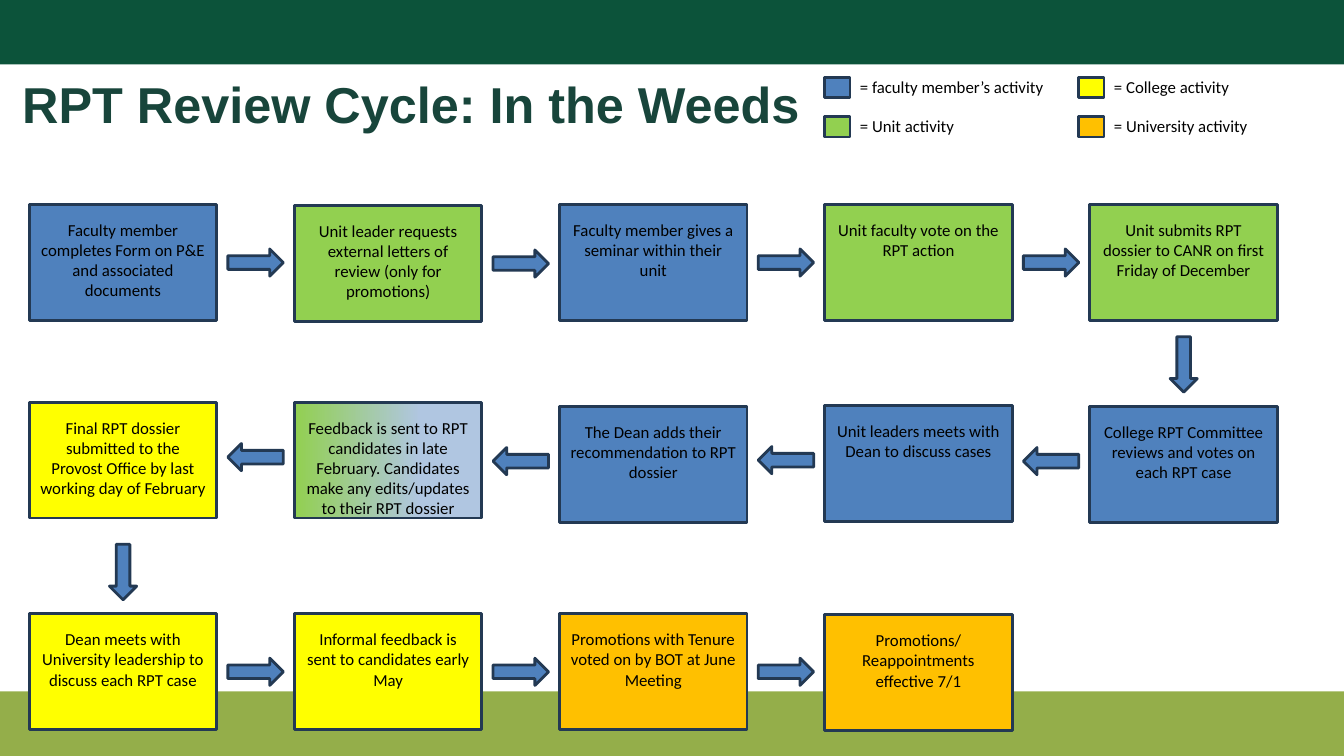
"""Build the RPT review cycle slide as a serpentine flow of steps."""
from dataclasses import dataclass

from pptx import Presentation
from pptx.dml.color import RGBColor
from pptx.enum.shapes import MSO_SHAPE
from pptx.enum.text import MSO_ANCHOR, MSO_AUTO_SIZE, PP_ALIGN
from pptx.util import Inches, Pt

RECTANGLE, ARROW = MSO_SHAPE.RECTANGLE, MSO_SHAPE.RIGHT_ARROW
LEFT, CENTER, TOP = PP_ALIGN.LEFT, PP_ALIGN.CENTER, MSO_ANCHOR.TOP
FIXED, GROW = MSO_AUTO_SIZE.NONE, MSO_AUTO_SIZE.SHAPE_TO_FIT_TEXT


@dataclass(frozen=True)
class Theme:
    header: str = "0C533A"
    footer: str = "94AE4A"
    title: str = "18453B"
    text: str = "000000"
    outline: str = "233953"
    faculty: str = "4F81BD"
    unit: str = "92D050"
    college: str = "FFFF00"
    university: str = "FFC000"
    faculty_tint: str = "B0C6E1"
    title_font: str = "Arial"
    body_font: str = "Calibri"
    title_size: int = 36
    body_size: int = 12
    outline_width: int = 2


THEME = Theme()
SHARED = (THEME.unit, THEME.faculty_tint)
SLIDE_WIDTH, SLIDE_HEIGHT = 13.33, 7.5
BAND_HEIGHT = 0.64
GRID_LEFT, COLUMN_STEP = 0.29, 2.63
BOX_WIDTH, BOX_HEIGHT, TEXT_DROP = 1.86, 1.15, 0.1
ARROW_WIDTH, ARROW_HEIGHT, ARROW_GAP = 0.55, 0.27, 0.11

LEGEND = [
    (8.18, 0.77, THEME.faculty, "= faculty member’s activity"),
    (8.18, 1.16, THEME.unit, "= Unit activity"),
    (10.7, 0.77, THEME.college, "= College activity"),
    (10.7, 1.16, THEME.university, "= University activity"),
]

ROWS = [
    (0, 0.44, [
        (2.03, THEME.faculty, "Faculty member completes Form on P&E and associated documents"),
        (2.04, THEME.unit, "Unit leader requests external letters of review (only for promotions)"),
        (2.03, THEME.faculty, "Faculty member gives a seminar within their unit"),
        (2.03, THEME.unit, "Unit faculty vote on the RPT action"),
        (2.03, THEME.unit, "Unit submits RPT dossier to CANR on first Friday of December"),
    ]),
    (180, 0.41, [
        (4.03, THEME.faculty, "College RPT Committee reviews and votes on each RPT case"),
        (4.02, THEME.faculty, "Unit leaders meets with Dean to discuss cases"),
        (4.03, THEME.faculty, "The Dean adds their recommendation to RPT dossier"),
        (3.99, SHARED, "Feedback is sent to RPT candidates in late February. "
                       "Candidates make any edits/updates to their RPT dossier"),
        (3.99, THEME.college, "Final RPT dossier submitted to the Provost Office "
                              "by last working day of February"),
    ]),
    (0, 0.44, [
        (6.09, THEME.college, "Dean meets with University leadership to discuss each RPT case"),
        (6.09, THEME.college, "Informal feedback is sent to candidates early May"),
        (6.09, THEME.university, "Promotions with Tenure voted on by BOT at June Meeting"),
        (6.1, THEME.university, "Promotions/Reappointments effective 7/1"),
    ]),
]
TURNS = [(4, 3.48), (0, 5.54)]


def column_left(column):
    return GRID_LEFT + column * COLUMN_STEP


class SlideBuilder:
    def __init__(self, presentation, theme):
        self.theme = theme
        self.slide = presentation.slides.add_slide(presentation.slide_layouts[5])

    def fill_text(self, frame, text, font, size, color, alignment, bold=False):
        frame.word_wrap = True
        frame.vertical_anchor = TOP
        paragraph = frame.paragraphs[0]
        paragraph.alignment = alignment
        run = paragraph.add_run()
        run.text = text
        run.font.name, run.font.size, run.font.bold = font, Pt(size), bold
        run.font.color.rgb = RGBColor.from_string(color)

    def title(self, text, left, top, width, height):
        title = self.slide.shapes.title
        title.left, title.top = Inches(left), Inches(top)
        title.width, title.height = Inches(width), Inches(height)
        title.text_frame.auto_size = FIXED
        self.fill_text(title.text_frame, text, self.theme.title_font,
                       self.theme.title_size, self.theme.title, LEFT, bold=True)

    def shape(self, kind, left, top, width, height, fill, outlined=True):
        shape = self.slide.shapes.add_shape(
            kind, Inches(left), Inches(top), Inches(width), Inches(height))
        shape.shadow.inherit = False
        if isinstance(fill, tuple):
            shape.fill.gradient()
            shape.fill.gradient_angle = 0
            for stop, color, position in zip(shape.fill.gradient_stops, fill, (0, 0.67)):
                stop.color.rgb = RGBColor.from_string(color)
                stop.position = position
        else:
            shape.fill.solid()
            shape.fill.fore_color.rgb = RGBColor.from_string(fill)
        if outlined:
            shape.line.color.rgb = RGBColor.from_string(self.theme.outline)
            shape.line.width = Pt(self.theme.outline_width)
        else:
            shape.line.fill.background()
        return shape

    def band(self, top, color):
        self.shape(RECTANGLE, 0, top, SLIDE_WIDTH, BAND_HEIGHT, color, outlined=False)

    def label(self, text, left, top, width, height, alignment=LEFT):
        box = self.slide.shapes.add_textbox(
            Inches(left), Inches(top), Inches(width), Inches(height))
        box.text_frame.auto_size = GROW
        self.fill_text(box.text_frame, text, self.theme.body_font,
                       self.theme.body_size, self.theme.text, alignment)

    def step(self, column, top, fill, text):
        left = column_left(column)
        self.shape(RECTANGLE, left, top, BOX_WIDTH, BOX_HEIGHT, fill)
        self.label(text, left, top + TEXT_DROP, BOX_WIDTH, 1.01, CENTER)

    def arrow(self, left, top, rotation):
        arrow = self.shape(ARROW, left, top, ARROW_WIDTH, ARROW_HEIGHT, self.theme.faculty)
        arrow.rotation = rotation

    def row(self, rotation, arrow_drop, steps):
        for index, (top, fill, text) in enumerate(steps):
            column = len(steps) - 1 - index if rotation else index
            self.step(column, top, fill, text)
            if index < len(steps) - 1:
                gap_column = column - 1 if rotation else column
                left = column_left(gap_column) + BOX_WIDTH + ARROW_GAP
                self.arrow(left, top + arrow_drop, rotation)

    def turn(self, column, top):
        self.arrow(column_left(column) + (BOX_WIDTH - ARROW_WIDTH) / 2, top, 90)

    def legend_entry(self, left, top, color, text):
        self.shape(RECTANGLE, left, top, 0.25, 0.2, color)
        self.label(text, left + 0.25, top - 0.06, 2.08, 0.3)


def main():
    presentation = Presentation()
    presentation.slide_width = Inches(SLIDE_WIDTH)
    presentation.slide_height = Inches(SLIDE_HEIGHT)
    builder = SlideBuilder(presentation, THEME)
    builder.band(SLIDE_HEIGHT - BAND_HEIGHT, THEME.footer)
    builder.band(0, THEME.header)
    builder.title("RPT Review Cycle: In the Weeds", 0.12, 0.68, 11.5, 1.45)
    for row in ROWS:
        builder.row(*row)
    for turn in TURNS:
        builder.turn(*turn)
    for entry in LEGEND:
        builder.legend_entry(*entry)
    presentation.save("out.pptx")


if __name__ == "__main__":
    main()
